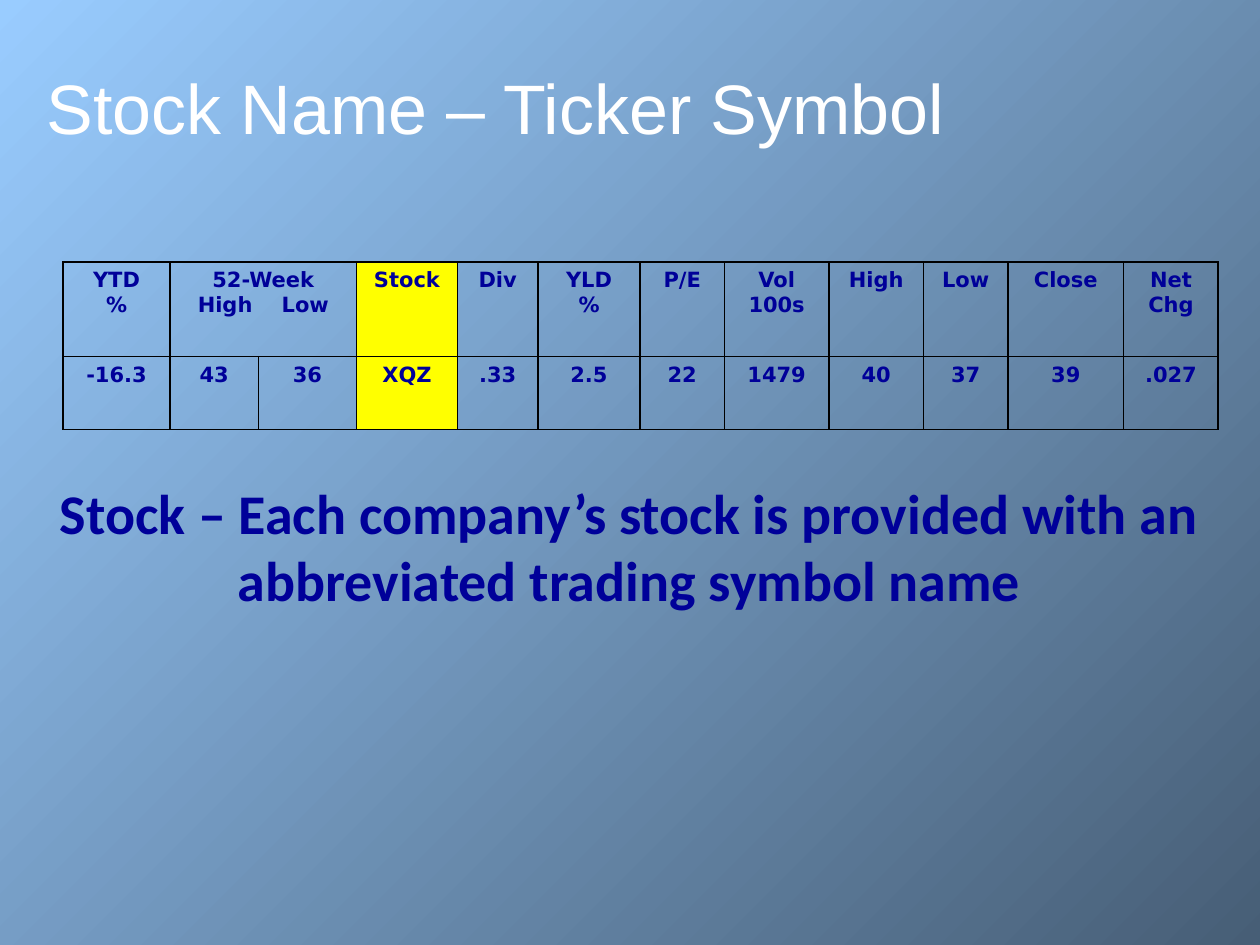
from lxml import etree
from pptx import Presentation
from pptx import util as u
from pptx.dml.color import RGBColor
from pptx.enum import text
from pptx.oxml.ns import qn

NAVY, WHITE, YELLOW, BLACK = "000099", "FFFFFF", "FFFF00", "000000"
COLUMN_WIDTHS = [0.85, 0.7, 0.78, 0.8, 0.64, 0.81, 0.67, 0.83, 0.75, 0.67, 0.92, 0.75]
ROW_HEIGHTS = [0.75, 0.58]
QUOTE_ROWS = [
    ["YTD\n%", "52-Week\nHigh Low", "", "Stock", "Div", "YLD\n%", "P/E",
     "Vol\n100s", "High", "Low", "Close", "Net\nChg"],
    ["-16.3", "43", "36", "XQZ", ".33", "2.5", "22", "1479", "40", "37", "39", ".027"],
]
STOCK_COLUMN = 3


def color(value):
    return RGBColor.from_string(value)


def style_span(span, font, size, hue, bold=False):
    span.font.name = font
    span.font.size = u.Pt(size)
    span.font.bold = bold
    span.font.color.rgb = color(hue)


def add_background(page):
    fill = page.background.fill
    fill.gradient()
    fill.gradient_angle = 315
    for stop, position, hue in zip(fill.gradient_stops, (0, 1), ("99CCFF", "475E76")):
        stop.position = position
        stop.color.rgb = color(hue)


def add_text(page, box, words, font, size, hue, bold, align, anchor):
    frame = page.shapes.add_textbox(*map(u.Inches, box)).text_frame
    frame.word_wrap = True
    frame.vertical_anchor = anchor
    frame.text = words
    para = frame.paragraphs[0]
    para.alignment = align
    style_span(para.runs[0], font, size, hue, bold)


def add_borders(cell):
    """Draw thin lines on all four sides; they must precede the cell's fill."""
    properties = cell._tc.get_or_add_tcPr()
    for index, side in enumerate(("lnL", "lnR", "lnT", "lnB")):
        line = etree.Element(qn(f"a:{side}"), w=str(u.Pt(1)))
        fill = etree.SubElement(line, qn("a:solidFill"))
        etree.SubElement(fill, qn("a:srgbClr"), val=BLACK)
        properties.insert(index, line)


def widen_space(para, points):
    """Put the single space of a two-word paragraph in its own, wider run."""
    first, second = para.text.split()
    para.text = first
    for words in (" ", second):
        para.add_run().text = words
    para.runs[1].font._element.set("spc", str(int(points * 100)))


def fill_cell(cell, words, highlighted):
    cell.text = words
    if highlighted:
        cell.fill.solid()
        cell.fill.fore_color.rgb = color(YELLOW)
    else:
        cell.fill.background()
    add_borders(cell)
    for para in cell.text_frame.paragraphs:
        para.alignment = text.PP_ALIGN.CENTER
        if " " in para.text:
            widen_space(para, 12.5)
        for span in para.runs:
            style_span(span, "DejaVu Sans", 12, NAVY, True)


def add_quote_table(page, left, top):
    size = (sum(COLUMN_WIDTHS), sum(ROW_HEIGHTS))
    frame = page.shapes.add_table(len(ROW_HEIGHTS), len(COLUMN_WIDTHS),
                                  *map(u.Inches, (left, top, *size)))
    table = frame.table
    table.first_row = table.horz_banding = False
    for column, width in zip(table.columns, COLUMN_WIDTHS):
        column.width = u.Inches(width)
    for row, height, entries in zip(table.rows, ROW_HEIGHTS, QUOTE_ROWS):
        row.height = u.Inches(height)
        for index, (cell, words) in enumerate(zip(row.cells, entries)):
            fill_cell(cell, words, index == STOCK_COLUMN)
    table.cell(0, 1).merge(table.cell(0, 2))


def main():
    deck = Presentation()
    deck.slide_width, deck.slide_height = u.Inches(10), u.Inches(7.5)
    page = deck.slides.add_slide(deck.slide_layouts[6])
    add_background(page)
    add_text(page, (0.27, 0.28, 9.45, 0.95), "Stock Name – Ticker Symbol",
             "Arial", 40, WHITE, False, text.PP_ALIGN.LEFT, text.MSO_ANCHOR.BOTTOM)
    add_quote_table(page, 0.5, 2.08)
    add_text(page, (0.33, 3.75, 9.33, 1.17),
             "Stock – Each company’s stock is provided with an abbreviated trading symbol name",
             "Calibri", 32, NAVY, True, text.PP_ALIGN.CENTER, text.MSO_ANCHOR.TOP)
    deck.save("out.pptx")


if __name__ == "__main__":
    main()
